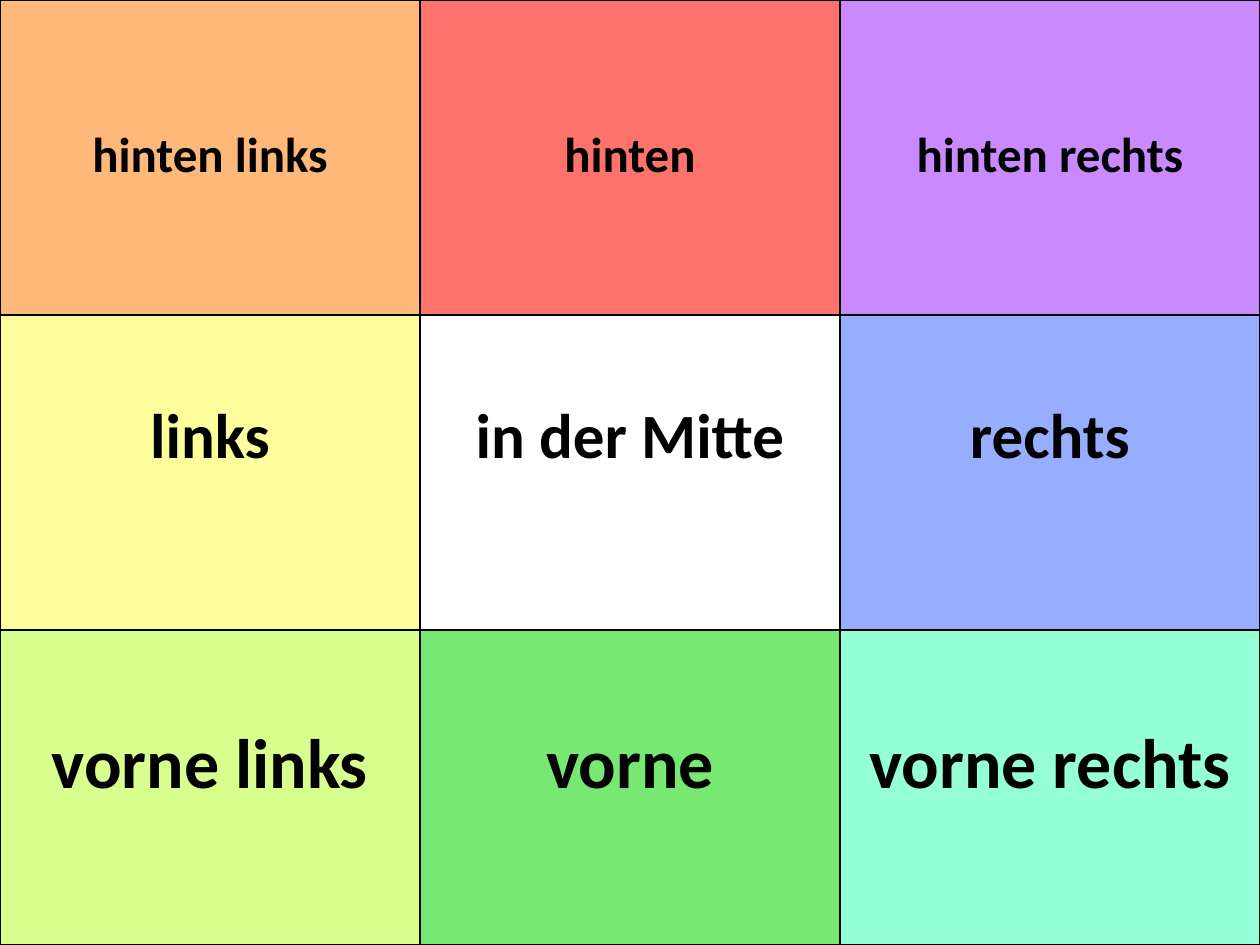
from dataclasses import dataclass

import pptx
import pptx.dml.color
import pptx.enum.text
import pptx.oxml
import pptx.oxml.ns
import pptx.table
import pptx.util

COLORS = {
    "black": "000000",
    "orange": "FEB879",
    "red": "FD736B",
    "purple": "CA8AFF",
    "yellow": "FEFF9C",
    "blue": "97ADFF",
    "lime": "D8FF8E",
    "green": "77E972",
    "mint": "95FFD5",
}
FONT = "Calibri"
LINE_HEIGHT = 1.22  # Calibri line height as a share of its size
BORDER_PT = 1


@dataclass(frozen=True)
class Place:
    label: str
    color: str | None = None


@dataclass(frozen=True)
class Depth:
    size: int  # text size in points
    lines_above: int  # label's distance from the top, in text lines
    places: tuple[Place, ...]


# Rows run from the back of the room to the front
DEPTHS = (
    Depth(28, 2, (Place("hinten links", "orange"), Place("hinten", "red"),
                  Place("hinten rechts", "purple"))),
    Depth(36, 1, (Place("links", "yellow"), Place("in der Mitte"),
                  Place("rechts", "blue"))),
    Depth(40, 1, (Place("vorne links", "lime"), Place("vorne", "green"),
                  Place("vorne rechts", "mint"))),
)


def rgb(name: str) -> pptx.dml.color.RGBColor:
    return pptx.dml.color.RGBColor.from_string(COLORS[name])


def add_borders(cell: pptx.table._Cell) -> None:
    tc_pr = cell._tc.get_or_add_tcPr()
    for i, side in enumerate(("lnL", "lnR", "lnT", "lnB")):
        tc_pr.insert(i, pptx.oxml.parse_xml(
            f'<a:{side} {pptx.oxml.ns.nsdecls("a")} w="{pptx.util.Pt(BORDER_PT)}">'
            f'<a:solidFill><a:srgbClr val="{COLORS["black"]}"/></a:solidFill>'
            f'</a:{side}>'))


def draw_place(cell: pptx.table._Cell, place: Place, depth: Depth) -> None:
    if place.color:
        cell.fill.solid()
        cell.fill.fore_color.rgb = rgb(place.color)
    else:
        cell.fill.background()
    add_borders(cell)

    cell.vertical_anchor = pptx.enum.text.MSO_ANCHOR.TOP
    cell.margin_top = pptx.util.Inches(0.05) + pptx.util.Pt(
        depth.lines_above * LINE_HEIGHT * depth.size)
    p = cell.text_frame.paragraphs[0]
    p.text = place.label
    p.alignment = pptx.enum.text.PP_ALIGN.CENTER
    p.font.name = FONT
    p.font.size = pptx.util.Pt(depth.size)
    p.font.bold = True
    p.font.color.rgb = rgb("black")


def main() -> None:
    prs = pptx.Presentation()
    prs.slide_width = pptx.util.Inches(10)
    prs.slide_height = pptx.util.Inches(7.5)
    s = prs.slides.add_slide(prs.slide_layouts[6])

    # Grid of places filling the whole slide
    table = s.shapes.add_table(len(DEPTHS), len(DEPTHS[0].places), 0, 0,
                               prs.slide_width, prs.slide_height).table
    table.first_row = False
    table.horz_banding = False
    for row, depth in enumerate(DEPTHS):
        for col, place in enumerate(depth.places):
            draw_place(table.cell(row, col), place, depth)

    prs.save("out.pptx")


if __name__ == "__main__":
    main()
